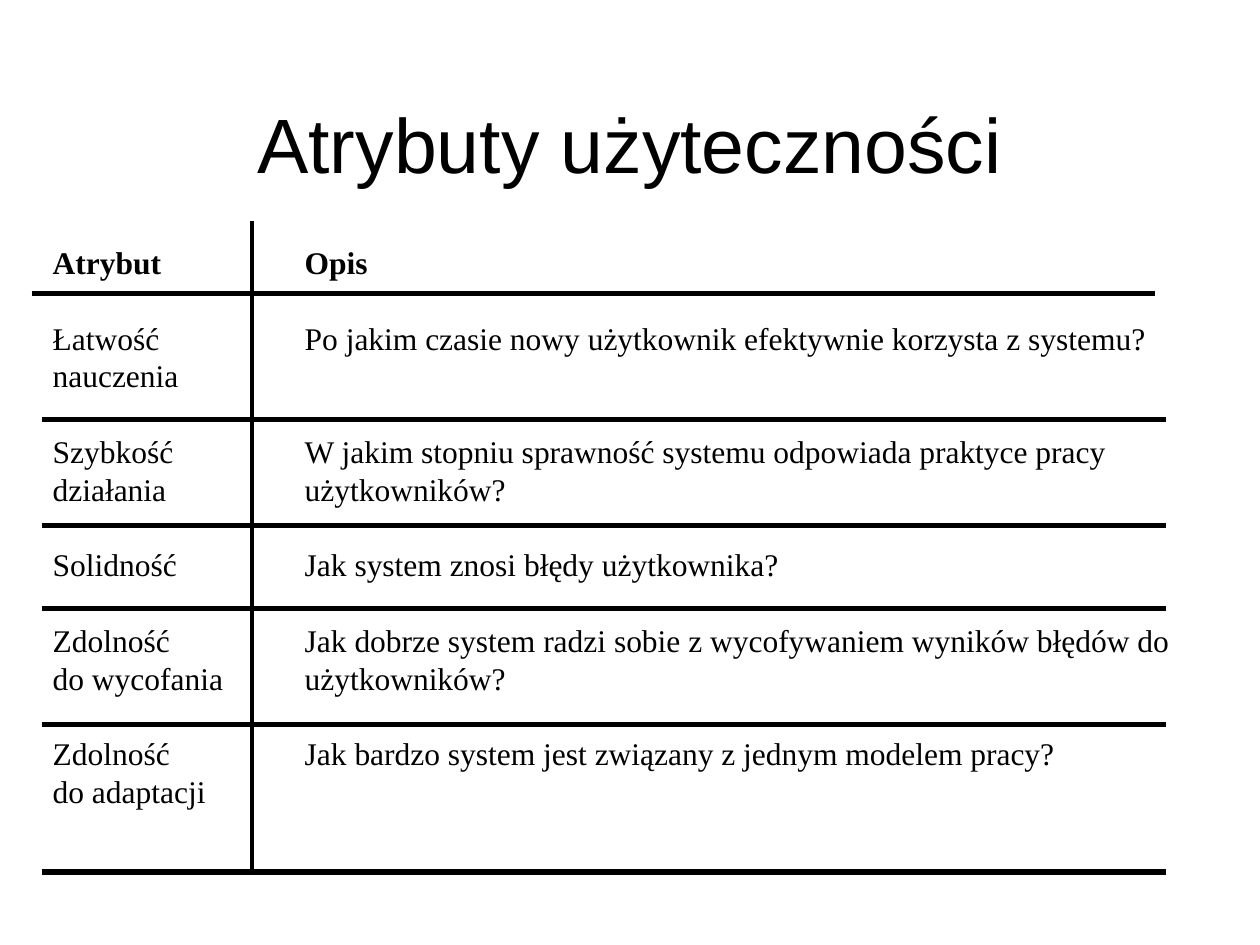
from lxml.etree import SubElement
from pptx import Presentation
from pptx.dml.color import RGBColor
from pptx.enum.shapes import MSO_CONNECTOR
from pptx.enum.text import MSO_ANCHOR, MSO_AUTO_SIZE, PP_ALIGN
from pptx.oxml.ns import qn
from pptx.util import Inches, Pt

TITLE = "Atrybuty użyteczności"
HEADER = [("Atrybut", "Opis")]
ATTRIBUTES = [
    [("Łatwość", "Po jakim czasie nowy użytkownik efektywnie korzysta z systemu?"),
     ("nauczenia", "")],
    [("Szybkość", "W jakim stopniu sprawność systemu odpowiada praktyce pracy"),
     ("działania", "użytkowników?")],
    [("Solidność", "Jak system znosi błędy użytkownika?")],
    [("Zdolność", "Jak dobrze system radzi sobie z wycofywaniem wyników błędów do"),
     ("do wycofania", "użytkowników?")],
    [("Zdolność", "Jak bardzo system jest związany z jednym modelem pracy?"),
     ("do adaptacji", "")],
]
ROW_RULES = [3.33, 4.17, 4.83, 5.75, 6.92]
RULE_LEFT, RULE_LENGTH = 0.33, 8.92
LINE_HEIGHT = 21.6
INK = "000000"


def color(value):
    return RGBColor.from_string(value)


def write(para, text, size=18, font="Times New Roman", bold=False, ink=INK):
    span = para.add_run()
    span.text = text
    span.font.size = Pt(size)
    span.font.name = font
    span.font.bold = bold
    span.font.color.rgb = color(ink)


def set_tab(para, position):
    tabs = SubElement(para._p.get_or_add_pPr(), qn("a:tabLst"))
    SubElement(tabs, qn("a:tab"), pos=str(Inches(position)), algn="l")


def write_row(para, lines, gap=0, bold=False):
    para.alignment = PP_ALIGN.LEFT
    para.line_spacing = Pt(LINE_HEIGHT)
    para.space_before = Pt(gap)
    set_tab(para, 2)
    for index, (name, description) in enumerate(lines):
        if index:
            para.add_line_break()
        write(para, f"{name}\t{description}" if description else name, bold=bold)


def add_rule(page, start, end, width=3):
    rule = page.shapes.add_connector(
        MSO_CONNECTOR.STRAIGHT, *(Inches(value) for value in (*start, *end)))
    rule.line.color.rgb = color(INK)
    rule.line.width = Pt(width)
    SubElement(rule._element.spPr, qn("a:effectLst"))


def add_title(page):
    title = page.shapes.title
    title.left, title.top, title.width, title.height = (
        Inches(value) for value in (0.5, 0.3, 9, 1.25))
    title.text_frame.vertical_anchor = MSO_ANCHOR.BOTTOM
    title.text_frame.auto_size = MSO_AUTO_SIZE.NONE
    para = title.text_frame.paragraphs[0]
    para.alignment = PP_ALIGN.CENTER
    write(para, TITLE, size=44, font="Arial")


def add_attributes(page):
    box = page.shapes.add_textbox(*(Inches(value) for value in (0.32, 1.88, 9.27, 4.61)))
    frame = box.text_frame
    frame.word_wrap = True
    write_row(frame.paragraphs[0], HEADER, bold=True)
    for lines in ATTRIBUTES:
        write_row(frame.add_paragraph(), lines, gap=LINE_HEIGHT)


def main():
    """Build the slide that lists the attributes of usability."""
    deck = Presentation()
    deck.slide_width, deck.slide_height = Inches(10), Inches(7.5)
    page = deck.slides.add_slide(deck.slide_layouts[5])
    add_title(page)
    add_attributes(page)
    add_rule(page, (2, 1.75), (2, ROW_RULES[-1]), width=2.25)
    add_rule(page, (0.25, 2.33), (0.25 + RULE_LENGTH, 2.33))
    for top in ROW_RULES:
        add_rule(page, (RULE_LEFT, top), (RULE_LEFT + RULE_LENGTH, top))
    deck.save("out.pptx")


if __name__ == "__main__":
    main()
